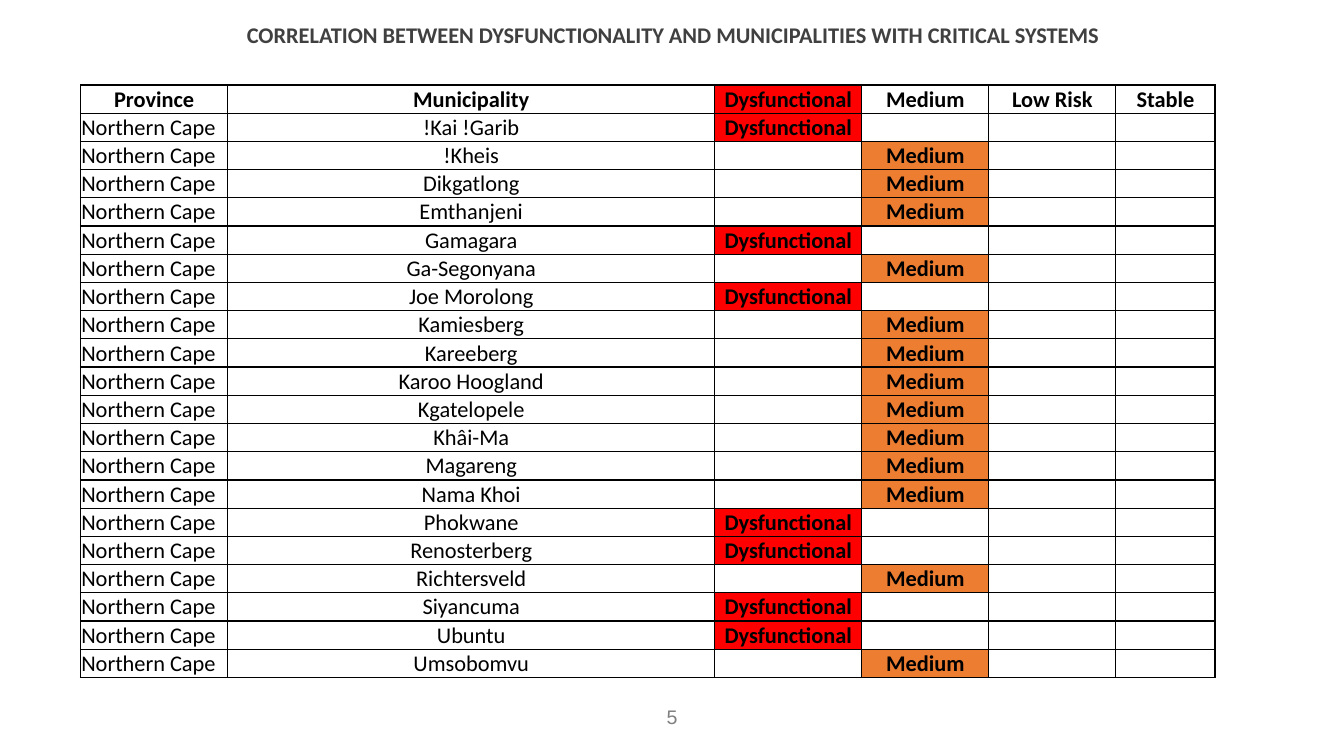
from lxml.etree import SubElement
from pptx import Presentation
from pptx.dml.color import RGBColor
from pptx.enum.text import MSO_ANCHOR as Anchor, PP_ALIGN as Align
from pptx.oxml.ns import qn
from pptx.util import Cm, Pt

PROVINCE = "Northern Cape"
HEADINGS = ["Province", "Municipality", "Dysfunctional", "Medium", "Low Risk", "Stable"]
COLUMN_WIDTHS = [3.71, 12.27, 3.71, 3.2, 3.2, 2.5]
ROW_HEIGHT = 0.71
RATING_FILLS = {"Dysfunctional": "FF0000", "Medium": "ED7D31"}
MUNICIPALITIES = [
    ("!Kai !Garib", "Dysfunctional"),
    ("!Kheis", "Medium"),
    ("Dikgatlong", "Medium"),
    ("Emthanjeni", "Medium"),
    ("Gamagara", "Dysfunctional"),
    ("Ga-Segonyana", "Medium"),
    ("Joe Morolong", "Dysfunctional"),
    ("Kamiesberg", "Medium"),
    ("Kareeberg", "Medium"),
    ("Karoo Hoogland", "Medium"),
    ("Kgatelopele", "Medium"),
    ("Khâi-Ma", "Medium"),
    ("Magareng", "Medium"),
    ("Nama Khoi", "Medium"),
    ("Phokwane", "Dysfunctional"),
    ("Renosterberg", "Dysfunctional"),
    ("Richtersveld", "Medium"),
    ("Siyancuma", "Dysfunctional"),
    ("Ubuntu", "Dysfunctional"),
    ("Umsobomvu", "Medium"),
]


def colour(value):
    return RGBColor.from_string(value)


def assign(target, values):
    for name, value in values.items():
        setattr(target, name, value)


class RiskPage:
    """Holds the text style and the current slide, and adds its elements."""

    font = "Calibri"
    size = 16
    ink = "000000"

    def __init__(self, deck):
        self.page = deck.slides.add_slide(deck.slide_layouts[5])

    def add_text(self, frame, text, align=Align.CENTER, bold=False, **style):
        para = frame.paragraphs[0]
        para.alignment = align
        size = style.get("size", self.size)
        if text:
            span = para.add_run()
            span.text = text
            assign(span.font, {"name": style.get("font", self.font), "size": Pt(size), "bold": bold})
            span.font.color.rgb = colour(style.get("ink", self.ink))
        else:
            SubElement(para._p, qn("a:endParaRPr"), sz=str(size * 100))
        return para

    def place(self, box, left, top, width, height):
        assign(box, {"left": Cm(left), "top": Cm(top), "width": Cm(width), "height": Cm(height)})
        assign(box.text_frame, {"word_wrap": True, "vertical_anchor": Anchor.TOP})

    def title(self, text, *position):
        box = self.page.shapes.title
        self.place(box, *position)
        para = self.add_text(box.text_frame, text, bold=True, ink="404040")
        para.line_spacing = 0.9

    def page_number(self, text, *position):
        box = self.page.shapes.add_textbox(0, 0, 0, 0)
        self.place(box, *position)
        self.add_text(box.text_frame, text, font="Arial", size=14, ink="808080")

    def cell(self, cell, text, heading, column):
        assign(cell, {
            "margin_left": Cm(0.02), "margin_right": Cm(0.02),
            "margin_top": Cm(0.02), "margin_bottom": 0,
            "vertical_anchor": Anchor.MIDDLE if heading else Anchor.BOTTOM,
        })
        align = Align.LEFT if column == 0 and not heading else Align.CENTER
        self.add_text(cell.text_frame, text, align, heading or column > 1)
        properties = cell._tc.get_or_add_tcPr()
        for side in ("lnL", "lnR", "lnT", "lnB"):
            line = SubElement(properties, qn(f"a:{side}"), w=str(Pt(1)))
            SubElement(SubElement(line, qn("a:solidFill")), qn("a:srgbClr"), val=self.ink)
        shade = RATING_FILLS.get(text)
        if shade and not (heading and text == "Medium"):
            cell.fill.solid()
            cell.fill.fore_color.rgb = colour(shade)
        else:
            cell.fill.background()

    def table(self, rows, left, top):
        table = self.page.shapes.add_table(
            len(rows), len(COLUMN_WIDTHS), Cm(left), Cm(top),
            Cm(sum(COLUMN_WIDTHS)), Cm(ROW_HEIGHT * len(rows)),
        ).table
        assign(table, {"first_row": False, "horz_banding": False})
        for column, width in zip(table.columns, COLUMN_WIDTHS):
            column.width = Cm(width)
        for row, texts in enumerate(rows):
            table.rows[row].height = Cm(ROW_HEIGHT)
            for column, text in enumerate(texts):
                self.cell(table.cell(row, column), text, row == 0, column)


def main():
    deck = Presentation()
    assign(deck, {"slide_width": Cm(33.87), "slide_height": Cm(19.05)})
    page = RiskPage(deck)
    page.title("CORRELATION BETWEEN DYSFUNCTIONALITY AND MUNICIPALITIES WITH CRITICAL SYSTEMS",
               2.03, 0.48, 29.87, 1.14)
    rows = [HEADINGS] + [
        [PROVINCE, name] + [rating if rating == heading else "" for heading in HEADINGS[2:]]
        for name, rating in MUNICIPALITIES
    ]
    page.table(rows, 2.03, 2.14)
    page.page_number("5", 13.13, 17.65, 7.62, 1.02)
    deck.save("out.pptx")


if __name__ == "__main__":
    main()
